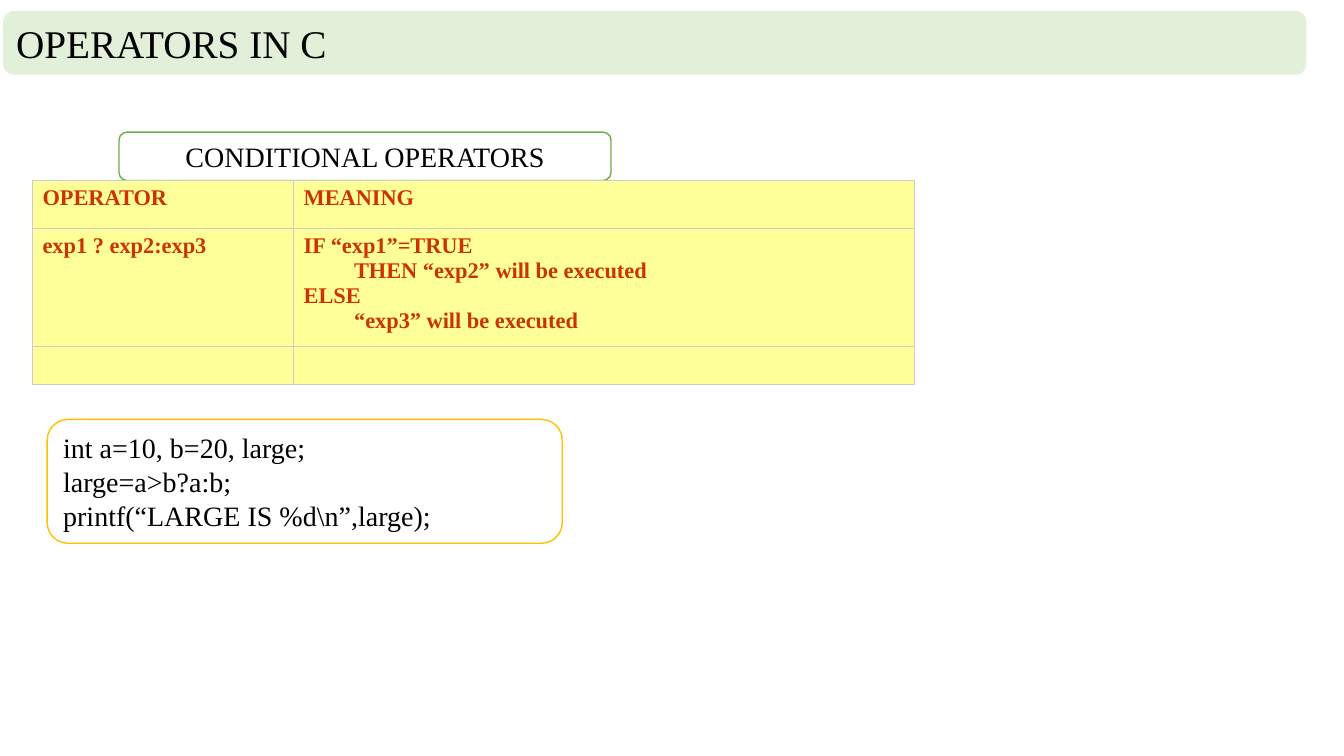
import pptx
import pptx.util
import pptx.dml.color
import pptx.enum.shapes
import pptx.enum.text
import pptx.oxml
import pptx.oxml.ns

Cm, Pt = pptx.util.Cm, pptx.util.Pt
ALIGN = pptx.enum.text.PP_ALIGN
FONT = "Times New Roman"
COLORS = {
    "text": "000000", "banner": "E2F0D9", "green": "70AD47", "amber": "FFC000",
    "cell": "FFFF99", "cell_text": "CC3300", "border": "CCCCCC",
}
BOXES = [
    {"at": (0.08, 0.28, 32.84, 1.6), "fill": "banner", "line": None, "size": 28,
     "align": ALIGN.LEFT, "lines": ["OPERATORS IN C"]},
    {"at": (3, 3.33, 12.4, 1.22), "fill": None, "line": "green", "size": 20,
     "align": ALIGN.CENTER, "lines": ["CONDITIONAL OPERATORS"]},
    {"at": (1.19, 10.57, 12.98, 3.12), "fill": None, "line": "amber", "size": 20,
     "align": ALIGN.LEFT, "lines": [
         "int a=10, b=20, large;", "large=a>b?a:b;",
         "printf(“LARGE IS %d\\n”,large);"]},
]
TABLE_AT = (0.82, 4.55)
COLUMNS = (6.58, 15.65)
ROWS = (1.21, 2.98, 0.94)
CELLS = [
    [[("OPERATOR", 0)], [("MEANING", 0)]],
    [[("exp1 ? exp2:exp3", 0)],
     [("IF “exp1”=TRUE", 0), ("THEN “exp2” will be executed", 1),
      ("ELSE", 0), ("“exp3” will be executed", 1)]],
    [[("", 0)], [("", 0)]],
]


def rgb(name):
    return pptx.dml.color.RGBColor.from_string(COLORS[name])


def write(tf, lines, size, color, align, bold=False):
    for i, (text, level) in enumerate(lines):
        p = tf.add_paragraph() if i else tf.paragraphs[0]
        if text:
            p.text = text
        p.alignment = align
        p.font.name, p.font.size, p.font.bold = FONT, Pt(size), bold
        p.font.color.rgb = rgb(color)
        if level:
            p.level = level
            pPr = p._p.get_or_add_pPr()
            pPr.set("marL", str(Cm(1.27 * level)))
            pPr.set("indent", "0")


def add_box(slide, box):
    s = slide.shapes.add_shape(
        pptx.enum.shapes.MSO_SHAPE.FLOWCHART_ALTERNATE_PROCESS, *map(Cm, box["at"]))
    s.shadow.inherit = False
    if box["fill"]:
        s.fill.solid()
        s.fill.fore_color.rgb = rgb(box["fill"])
    else:
        s.fill.background()
    if box["line"]:
        s.line.color.rgb = rgb(box["line"])
        s.line.width = Pt(1)
    else:
        s.line.fill.background()
    tf = s.text_frame
    tf.word_wrap = True
    write(tf, [(line, 0) for line in box["lines"]], box["size"], "text", box["align"])


def add_borders(cell):
    tcPr = cell._tc.get_or_add_tcPr()
    for side in ("lnL", "lnR", "lnT", "lnB"):
        tcPr.append(pptx.oxml.parse_xml(
            f'<a:{side} {pptx.oxml.ns.nsdecls("a")} w="{Pt(1)}"><a:solidFill>'
            f'<a:srgbClr val="{COLORS["border"]}"/></a:solidFill></a:{side}>'))


def add_operator_table(slide):
    size = (sum(COLUMNS), sum(ROWS))
    table = slide.shapes.add_table(
        len(ROWS), len(COLUMNS), *map(Cm, TABLE_AT + size)).table
    for column, width in zip(table.columns, COLUMNS):
        column.width = Cm(width)
    for row, height, contents in zip(table.rows, ROWS, CELLS):
        row.height = Cm(height)
        for cell, lines in zip(row.cells, contents):
            add_borders(cell)
            cell.fill.solid()
            cell.fill.fore_color.rgb = rgb("cell")
            write(cell.text_frame, lines, 16, "cell_text", ALIGN.JUSTIFY, True)


def main():
    prs = pptx.Presentation()
    prs.slide_width, prs.slide_height = Cm(33.87), Cm(19.05)
    slide = prs.slides.add_slide(prs.slide_layouts[6])
    title, heading, code = BOXES
    add_box(slide, title)
    add_box(slide, heading)
    add_operator_table(slide)
    add_box(slide, code)
    prs.save("out.pptx")


if __name__ == "__main__":
    main()
